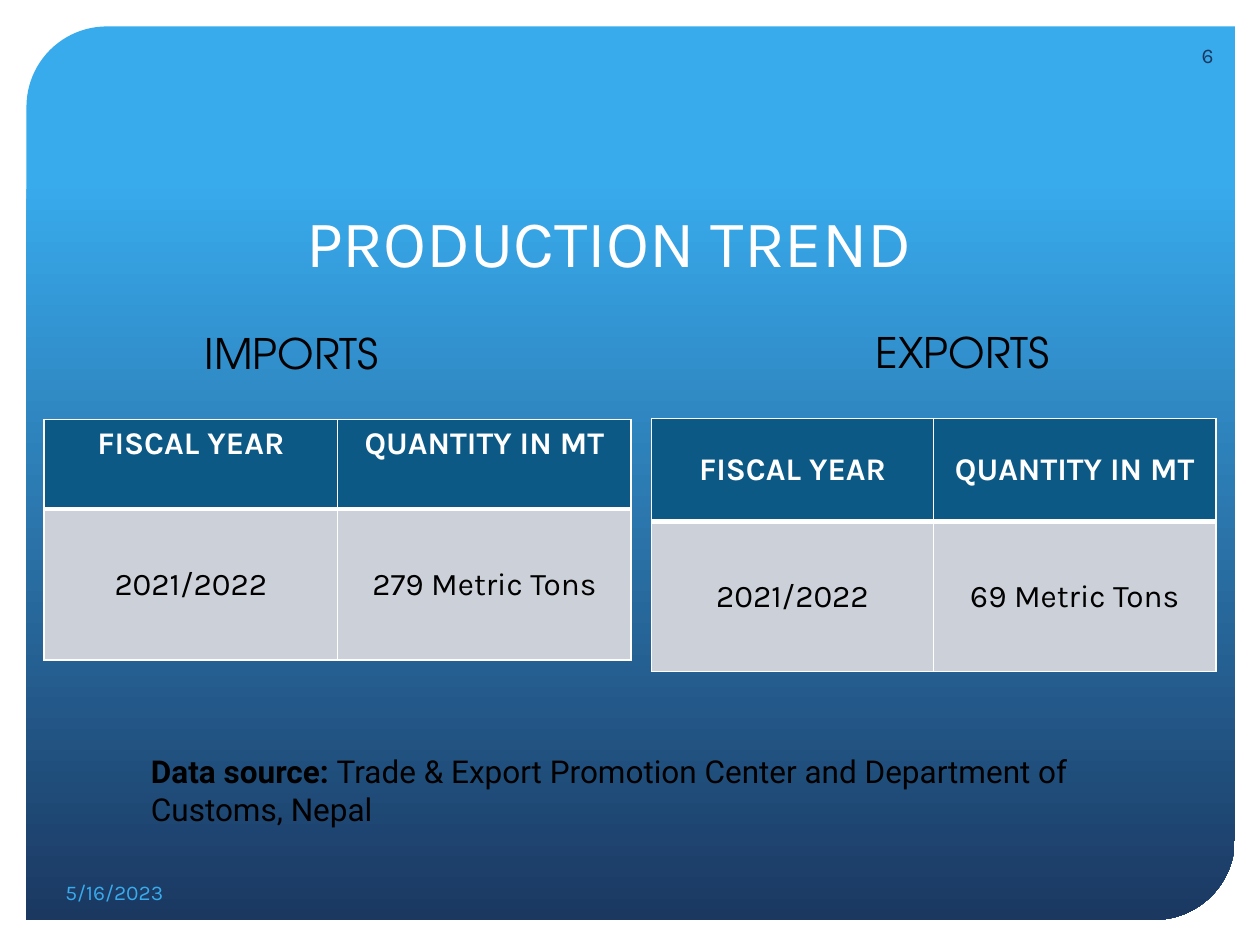
from lxml import etree
from pptx import Presentation, util as u
from pptx.dml.color import RGBColor
from pptx.enum import shapes, text
from pptx.oxml.ns import qn

WIDTH, HEIGHT = 10, 7.5
WHITE, BLACK, SKY, NAVY = "FFFFFF", "000000", "38ABED", "1B3861"
HEADER_FILL, BODY_FILL = "0C5986", "CCD1D9"
LEFT, CENTER, RIGHT = text.PP_ALIGN.LEFT, text.PP_ALIGN.CENTER, text.PP_ALIGN.RIGHT
TOP, MIDDLE, BOTTOM = text.MSO_ANCHOR.TOP, text.MSO_ANCHOR.MIDDLE, text.MSO_ANCHOR.BOTTOM

TITLE = ("PRODUCTION TREND", (2.33, 1.14, 5.73, 1.14))
HEADERS = ["FISCAL YEAR", "QUANTITY IN MT"]
TABLES = [
    {"label": "IMPORTS", "label_box": (1.41, 2.55, 1.81, 0.5),
     "values": ["2021/2022", "279 Metric Tons"],
     "origin": (0.35, 3.33), "column": 2.33, "rows": (0.71, 1.2), "anchor": TOP},
    {"label": "EXPORTS", "label_box": (6.72, 2.54, 1.84, 0.5),
     "values": ["2021/2022", "69 Metric Tons"],
     "origin": (5.17, 3.32), "column": 2.24, "rows": (0.82, 1.19), "anchor": MIDDLE},
]
SOURCE = [("Data source:", True),
          ("\N{NO-BREAK SPACE}Trade & Export Promotion Center and Department of Customs, Nepal", False)]
SOURCE_BOX = (1.1, 5.92, 7.84, 0.71)
FOOTERS = [("5/16/2023", (0.42, 6.88, 2.06, 0.4), SKY, LEFT),
           ("6", (9.19, 0.24, 0.54, 0.4), NAVY, RIGHT)]


def color(value):
    return RGBColor.from_string(value)


def inches(values):
    return [u.Inches(value) for value in values]


def write(frame, runs, size, font_color, name="Karla", align=LEFT, anchor=TOP):
    frame.vertical_anchor = anchor
    paragraph = frame.paragraphs[0]
    paragraph.alignment = align
    for words, bold in runs:
        run = paragraph.add_run()
        run.text = words
        formats = {"size": u.Pt(size), "name": name, "bold": bold}
        for key, value in formats.items():
            setattr(run.font, key, value)
        run.font.color.rgb = color(font_color)


def add_text(slide, box, runs, size, font_color, wrap=True, **formats):
    frame = slide.shapes.add_textbox(*inches(box)).text_frame
    frame.word_wrap = wrap
    write(frame, runs, size, font_color, **formats)


def add_border(cell, side, width):
    properties = cell._tc.get_or_add_tcPr()
    line = etree.Element(qn("a:" + side), w=str(u.Pt(width)))
    fill = etree.SubElement(line, qn("a:solidFill"))
    etree.SubElement(fill, qn("a:srgbClr"), val=WHITE)
    properties.append(line)


def format_cell(cell, words, is_header, anchor):
    widths = {"lnL": 1, "lnR": 1, "lnT": 1 if is_header else 3, "lnB": 3 if is_header else 1}
    for side, width in widths.items():
        add_border(cell, side, width)
    cell.fill.solid()
    cell.fill.fore_color.rgb = color(HEADER_FILL if is_header else BODY_FILL)
    cell.vertical_anchor = anchor
    write(cell.text_frame, [(words, is_header)], 18, WHITE if is_header else BLACK,
          align=CENTER, anchor=anchor)


def add_trade_table(slide, data):
    rows = [HEADERS, data["values"]]
    size = (data["column"] * len(HEADERS), sum(data["rows"]))
    frame = slide.shapes.add_table(len(rows), len(HEADERS), *inches(data["origin"] + size))
    table = frame.table
    for column in table.columns:
        column.width = u.Inches(data["column"])
    for index, (row, height) in enumerate(zip(rows, data["rows"])):
        table.rows[index].height = u.Inches(height)
        for position, words in enumerate(row):
            anchor = data["anchor"] if index == 0 else MIDDLE
            format_cell(table.cell(index, position), words, index == 0, anchor)


def add_backdrop(slide):
    margin = 0.21
    box = (margin, margin, WIDTH - 2 * margin + 0.01, HEIGHT - 2 * margin + 0.01)
    shape = slide.shapes.add_shape(shapes.MSO_SHAPE.ROUND_2_DIAG_RECTANGLE, *inches(box))
    shape.adjustments[0], shape.adjustments[1] = 0.09, 0
    shape.shadow.inherit = False
    shape.line.fill.background()
    shape.fill.gradient()
    shape.fill.gradient_angle = 270
    for stop, (position, value) in zip(shape.fill.gradient_stops, [(0.17, SKY), (1, NAVY)]):
        stop.position = position
        stop.color.rgb = color(value)
    slide.shapes._spTree.insert(2, shape._element)


def main():
    presentation = Presentation()
    presentation.slide_width, presentation.slide_height = inches((WIDTH, HEIGHT))
    slide = presentation.slides.add_slide(presentation.slide_layouts[5])
    add_backdrop(slide)

    words, box = TITLE
    title = slide.shapes.title
    title.left, title.top, title.width, title.height = inches(box)
    write(title.text_frame, [(words, False)], 38, WHITE, anchor=BOTTOM)

    for data in TABLES:
        add_text(slide, data["label_box"], [(data["label"], False)], 24, BLACK,
                 wrap=False, name="TeX Gyre Adventor", align=CENTER)
        add_trade_table(slide, data)
    add_text(slide, SOURCE_BOX, SOURCE, 18, BLACK, name="Roboto")
    for words, box, font_color, align in FOOTERS:
        add_text(slide, box, [(words, False)], 12, font_color, align=align, anchor=MIDDLE)
    presentation.save("out.pptx")


if __name__ == "__main__":
    main()
